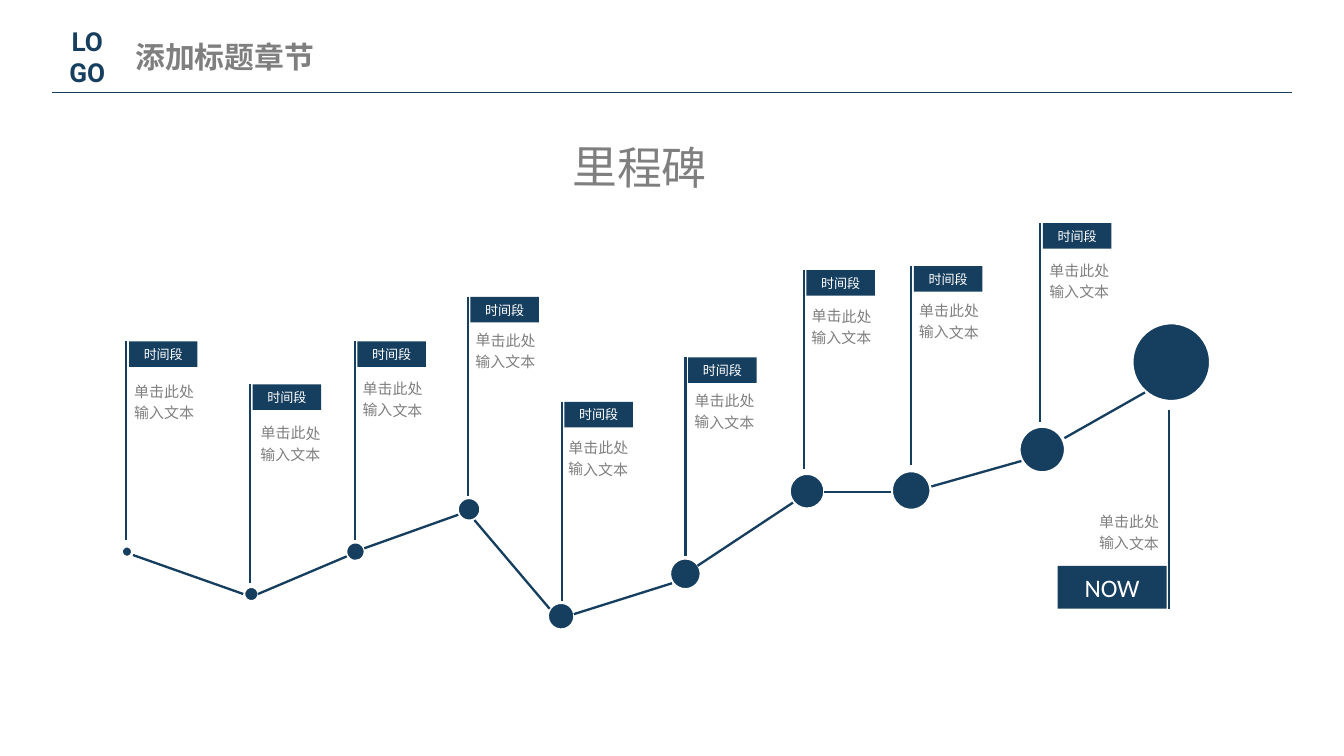
from collections import namedtuple

from lxml import etree
from pptx import Presentation
from pptx.dml.color import RGBColor
from pptx.enum.shapes import MSO_CONNECTOR, MSO_SHAPE
from pptx.enum.text import MSO_ANCHOR, MSO_AUTO_SIZE, PP_ALIGN
from pptx.oxml.ns import qn
from pptx.util import Inches, Pt

STRAIGHT = MSO_CONNECTOR.STRAIGHT
ELLIPSE, RECTANGLE = MSO_SHAPE.OVAL, MSO_SHAPE.RECTANGLE
LEFT, CENTER = PP_ALIGN.LEFT, PP_ALIGN.CENTER
MIDDLE = MSO_ANCHOR.MIDDLE
GROW = MSO_AUTO_SIZE.SHAPE_TO_FIT_TEXT

NAVY = RGBColor(0x16, 0x3E, 0x5F)
RULE_NAVY = RGBColor(0x14, 0x3D, 0x5F)
GRAY = RGBColor(0x7F, 0x7F, 0x7F)
WHITE = RGBColor(0xFF, 0xFF, 0xFF)
CHINESE = "Noto Sans CJK SC"

# The 16:9 slide is a grid of square cells, 1000 columns wide.
SLIDE_WIDTH = Inches(10)
SLIDE_HEIGHT = SLIDE_WIDTH * 9 // 16
COLUMNS = 1000
CELL = SLIDE_WIDTH // COLUMNS

Box = namedtuple("Box", "left top width height")
Dot = namedtuple("Dot", "left top size rotation")
Milestone = namedtuple("Milestone", "pole top caption_left caption_top")

DOTS = [
    Dot(90, 406, 9, 343.6), Dot(181, 436, 12, 44.7),
    Dot(257, 403, 15, 334.5), Dot(340, 370, 18, 15.6),
    Dot(407, 448, 21, 350.3), Dot(498, 415, 24, 327),
    Dot(587, 352, 27, 4.1), Dot(663, 350, 30, 351.9),
    Dot(758, 317, 35, 331.8), Dot(842, 240, 59, 357.3),
]
# Each segment leaves one dot's rim and reaches the next: x1, y1, x2, y2.
SEGMENTS = [
    (99, 413, 181, 442), (192, 442, 258, 414), (271, 408, 341, 383),
    (353, 387, 409, 453), (427, 457, 500, 434), (519, 421, 590, 374),
    (613, 366, 663, 366), (693, 362, 760, 343), (792, 326, 852, 292),
]
MILESTONES = [
    Milestone(94, 254, 90, 277), Milestone(186, 286, 184, 308),
    Milestone(264, 254, 260, 275), Milestone(348, 221, 344, 239),
    Milestone(418, 299, 413, 319), Milestone(510, 266, 507, 284),
    Milestone(598, 201, 594, 221), Milestone(678, 198, 674, 217),
    Milestone(774, 166, 771, 187),
]
POLE_HEIGHT = 148
FLAG_GAP = 2
FLAG_WIDTH, FLAG_HEIGHT = 51, 19
CAPTION_WIDTH, CAPTION_HEIGHT = 65, 42
TILT = 0.5


def cells(*counts):
    return [count * CELL for count in counts]


def write(frame, lines, size, color, font=CHINESE, align=LEFT, bold=False, spacing=None):
    frame.word_wrap = True
    frame.text = "\n".join(lines)
    for paragraph in frame.paragraphs:
        paragraph.alignment = align
        if spacing:
            paragraph.line_spacing = spacing
        paragraph.font.size = Pt(size)
        paragraph.font.bold = bold
        paragraph.font.color.rgb = color
        paragraph.font.name = font
        defaults = paragraph._p.pPr.find(qn("a:defRPr"))
        etree.SubElement(defaults, qn("a:ea"), typeface=font)


def add_text(slide, box, lines, size, color, rotation=0, **style):
    label = slide.shapes.add_textbox(*cells(*box))
    write(label.text_frame, lines, size, color, **style)
    label.text_frame.auto_size = GROW
    label.rotation = rotation


def add_line(slide, x1, y1, x2, y2, color=NAVY, weight=1.25):
    line = slide.shapes.add_connector(STRAIGHT, *cells(x1, y1, x2, y2))
    line.line.color.rgb = color
    line.line.width = Pt(weight)
    etree.SubElement(line._element.spPr, qn("a:effectLst"))


def add_solid(slide, preset, box):
    solid = slide.shapes.add_shape(preset, *cells(*box))
    solid.shadow.inherit = False
    solid.fill.solid()
    solid.fill.fore_color.rgb = NAVY
    solid.line.fill.background()
    return solid


def add_flag(slide, box, label, size, font=CHINESE):
    flag = add_solid(slide, RECTANGLE, box)
    write(flag.text_frame, [label], size, WHITE, font=font, align=CENTER)
    flag.text_frame.vertical_anchor = MIDDLE


def add_caption(slide, left, top):
    add_text(slide, Box(left, top, CAPTION_WIDTH, CAPTION_HEIGHT),
             ["单击此处输入文本"], 8, GRAY, rotation=TILT, spacing=1.2)


def add_header(slide, box):
    left, top, width, height = box
    add_line(slide, left, top + height, left + width, top + height, RULE_NAVY, 0.75)
    add_text(slide, Box(left + 52, top + 10, 186, 37), ["添加标题章节"], 16, GRAY, bold=True)
    add_text(slide, Box(left - 8, top, 68, 57), ["LO", "GO"], 14, NAVY,
             font="Roboto", align=CENTER, bold=True)


def add_trail(slide, box):
    """Draw the growing dots and the segments between them."""
    for dot in DOTS:
        circle = add_solid(slide, ELLIPSE, Box(
            box.left + dot.left, box.top + dot.top, dot.size, dot.size))
        circle.line.color.rgb = WHITE
        circle.line.width = Pt(2)
        circle.rotation = dot.rotation
    for x1, y1, x2, y2 in SEGMENTS:
        add_line(slide, box.left + x1, box.top + y1, box.left + x2, box.top + y2)


def add_milestones(slide, box):
    for stop in MILESTONES:
        pole, top = box.left + stop.pole, box.top + stop.top
        add_line(slide, pole, top, pole, top + POLE_HEIGHT)
        add_flag(slide, Box(pole + FLAG_GAP, top, FLAG_WIDTH, FLAG_HEIGHT), "时间段", 7)
        add_caption(slide, box.left + stop.caption_left, box.top + stop.caption_top)


def add_present(slide, box):
    """Hang the final flag at the foot of a pole on the box's right edge."""
    pole, foot = box.left + box.width, box.top + box.height
    flag_width, flag_height = 81, 32
    add_line(slide, pole, box.top, pole, foot)
    add_flag(slide, Box(pole - FLAG_GAP - flag_width, foot - flag_height,
                        flag_width, flag_height), "NOW", 13.5, font="Calibri")
    add_caption(slide, pole - 62, box.top + 69)


def main():
    presentation = Presentation()
    presentation.slide_width, presentation.slide_height = SLIDE_WIDTH, SLIDE_HEIGHT
    slide = presentation.slides.add_slide(presentation.slide_layouts[6])
    whole = Box(0, 0, COLUMNS, SLIDE_HEIGHT // CELL)

    add_trail(slide, whole)
    add_milestones(slide, whole)
    add_present(slide, Box(787, 305, 83, POLE_HEIGHT))
    add_text(slide, Box(239, 91, 474, 54), ["里程碑"], 24, GRAY,
             rotation=TILT, align=CENTER, spacing=1.2)
    add_header(slide, Box(39, 14, 922, 55))
    presentation.save("out.pptx")


if __name__ == "__main__":
    main()
